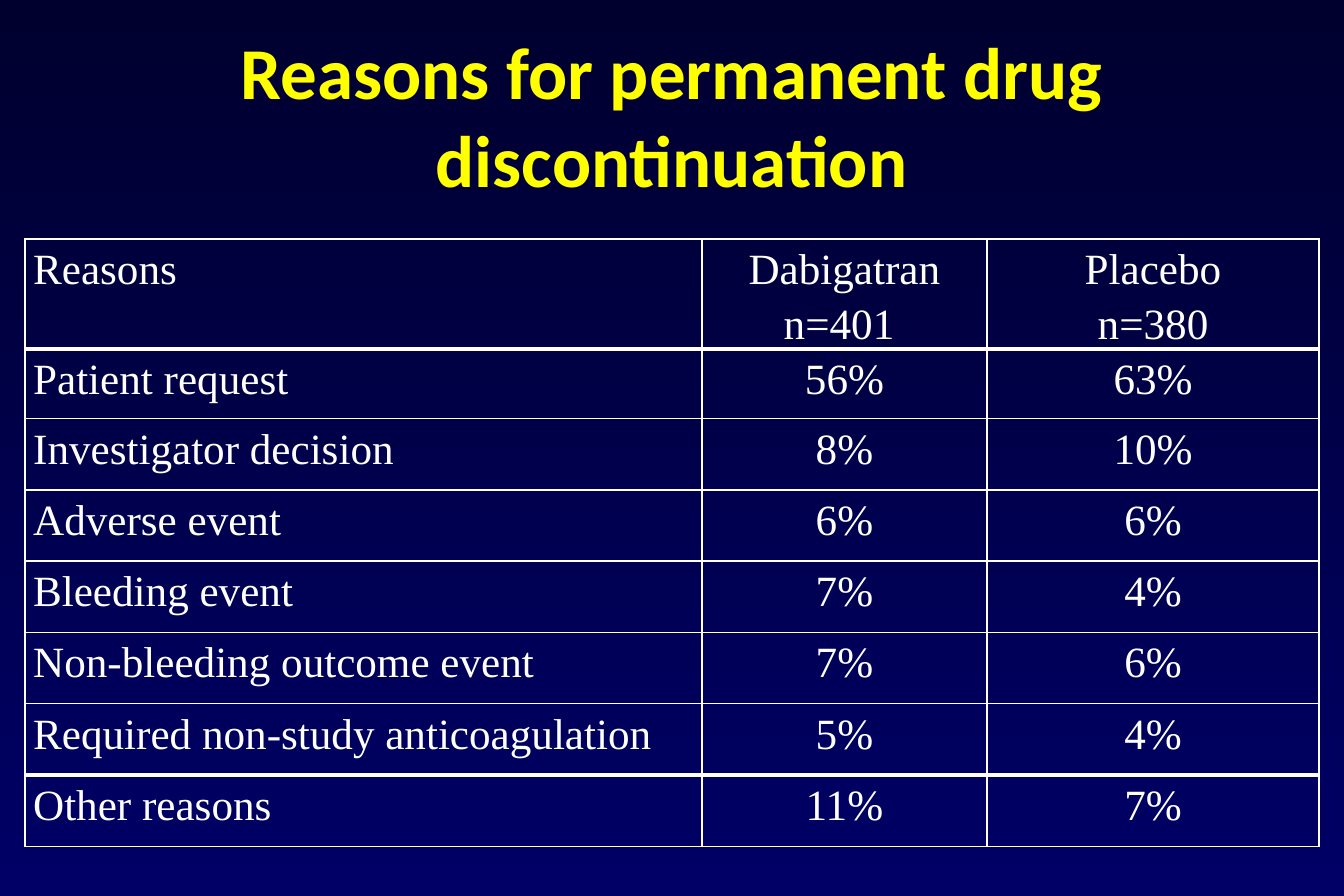
from dataclasses import dataclass

from lxml import etree
from pptx import Presentation
from pptx import util as u
from pptx.dml.color import RGBColor
from pptx.enum import text
from pptx.oxml import ns

TITLE = "Reasons for permanent drug discontinuation"
ROWS = [
    ("Reasons", "Dabigatran\nn=401 ", "Placebo\nn=380"),
    ("Patient request", "56%", "63%"),
    ("Investigator decision", "8%", "10%"),
    ("Adverse event", "6%", "6%"),
    ("Bleeding event", "7%", "4%"),
    ("Non-bleeding outcome event", "7%", "6%"),
    ("Required non-study anticoagulation", "5%", "4%"),
    ("Other reasons", "11%", "7%"),
]


@dataclass(frozen=True)
class Theme:
    top: str = "00002F"
    bottom: str = "000066"
    title: str = "FFFF00"
    ink: str = "FFFFFF"
    title_font: str = "Calibri"
    body_font: str = "Times New Roman"
    title_size: int = 44
    body_size: int = 26
    thin: int = 1
    thick: int = 3


THEME = Theme()
LEFT, WIDTH = 15, 780
TITLE_TOP, TITLE_HEIGHT = 24, 90
TABLE_TOP = 144
COLUMN_WIDTHS = [408, 172, 200]
ROW_HEIGHTS = [66, 42] + [43] * (len(ROWS) - 2)


def style(span, font, size, color, bold=False):
    span.font.name = font
    span.font.size = u.Pt(size)
    span.font.bold = bold
    span.font.color.rgb = RGBColor.from_string(color)


def set_borders(cell, widths):
    properties = cell._tc.get_or_add_tcPr()
    for index, (side, width) in enumerate(widths.items()):
        line = etree.Element(ns.qn(f"a:ln{side}"), w=str(u.Pt(width)))
        fill = etree.SubElement(line, ns.qn("a:solidFill"))
        etree.SubElement(fill, ns.qn("a:srgbClr"), val=THEME.ink)
        properties.insert(index, line)


def fill_cell(cell, words, centred):
    cell.fill.background()
    cell.margin_left = cell.margin_right = u.Pt(5)
    cell.margin_top = cell.margin_bottom = u.Pt(0)
    cell.text_frame.text = words
    for para in cell.text_frame.paragraphs:
        para.alignment = text.PP_ALIGN.CENTER if centred else text.PP_ALIGN.LEFT
        para.line_spacing = 1.15
        for span in para.runs:
            style(span, THEME.body_font, THEME.body_size, THEME.ink)


def paint_background(page):
    fill = page.background.fill
    fill.gradient()
    fill.gradient_angle = 270
    for stop, color, position in zip(fill.gradient_stops, (THEME.top, THEME.bottom), (0, 1)):
        stop.color.rgb = RGBColor.from_string(color)
        stop.position = position


def add_title(page):
    box = page.shapes.title
    box.left, box.top = u.Pt(LEFT), u.Pt(TITLE_TOP)
    box.width, box.height = u.Pt(WIDTH), u.Pt(TITLE_HEIGHT)
    frame = box.text_frame
    frame.text = TITLE
    frame.word_wrap = True
    frame.auto_size = text.MSO_AUTO_SIZE.NONE
    frame.vertical_anchor = text.MSO_ANCHOR.MIDDLE
    para = frame.paragraphs[0]
    para.alignment = text.PP_ALIGN.CENTER
    style(para.runs[0], THEME.title_font, THEME.title_size, THEME.title, True)


def add_reasons(page):
    table = page.shapes.add_table(
        len(ROWS), len(COLUMN_WIDTHS), u.Pt(LEFT), u.Pt(TABLE_TOP),
        u.Pt(WIDTH), u.Pt(sum(ROW_HEIGHTS))).table
    table.horz_banding = False
    for column, width in zip(table.columns, COLUMN_WIDTHS):
        column.width = u.Pt(width)
    for row, height in zip(table.rows, ROW_HEIGHTS):
        row.height = u.Pt(height)
    thick_edges = {1, len(ROWS) - 1}
    for r, row in enumerate(ROWS):
        top, bottom = (THEME.thick if edge in thick_edges else THEME.thin for edge in (r, r + 1))
        for c, words in enumerate(row):
            cell = table.cell(r, c)
            fill_cell(cell, words, c > 0)
            set_borders(cell, {"L": THEME.thin, "R": THEME.thin, "T": top, "B": bottom})


def main():
    deck = Presentation()
    deck.slide_width, deck.slide_height = u.Pt(810), u.Pt(540)
    page = deck.slides.add_slide(deck.slide_layouts.get_by_name("Title Only"))
    paint_background(page)
    add_title(page)
    add_reasons(page)
    deck.save("out.pptx")


if __name__ == "__main__":
    main()
